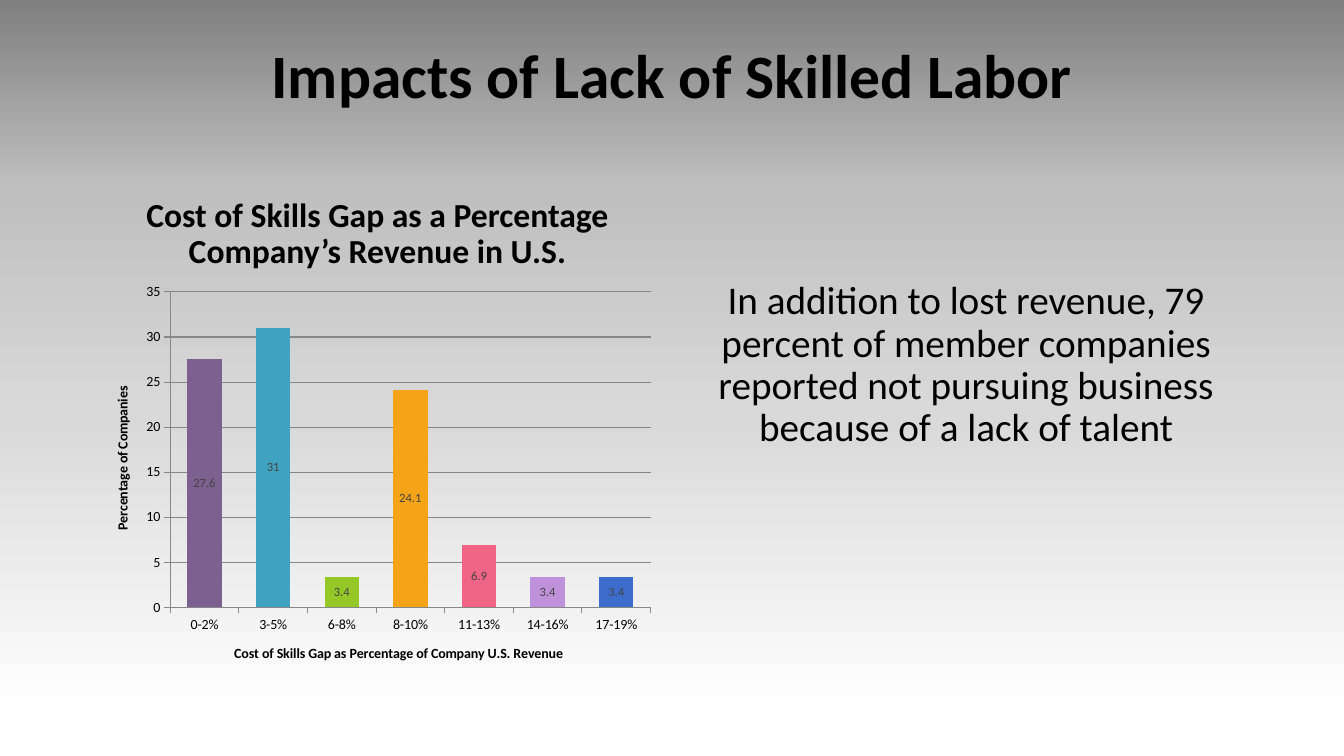
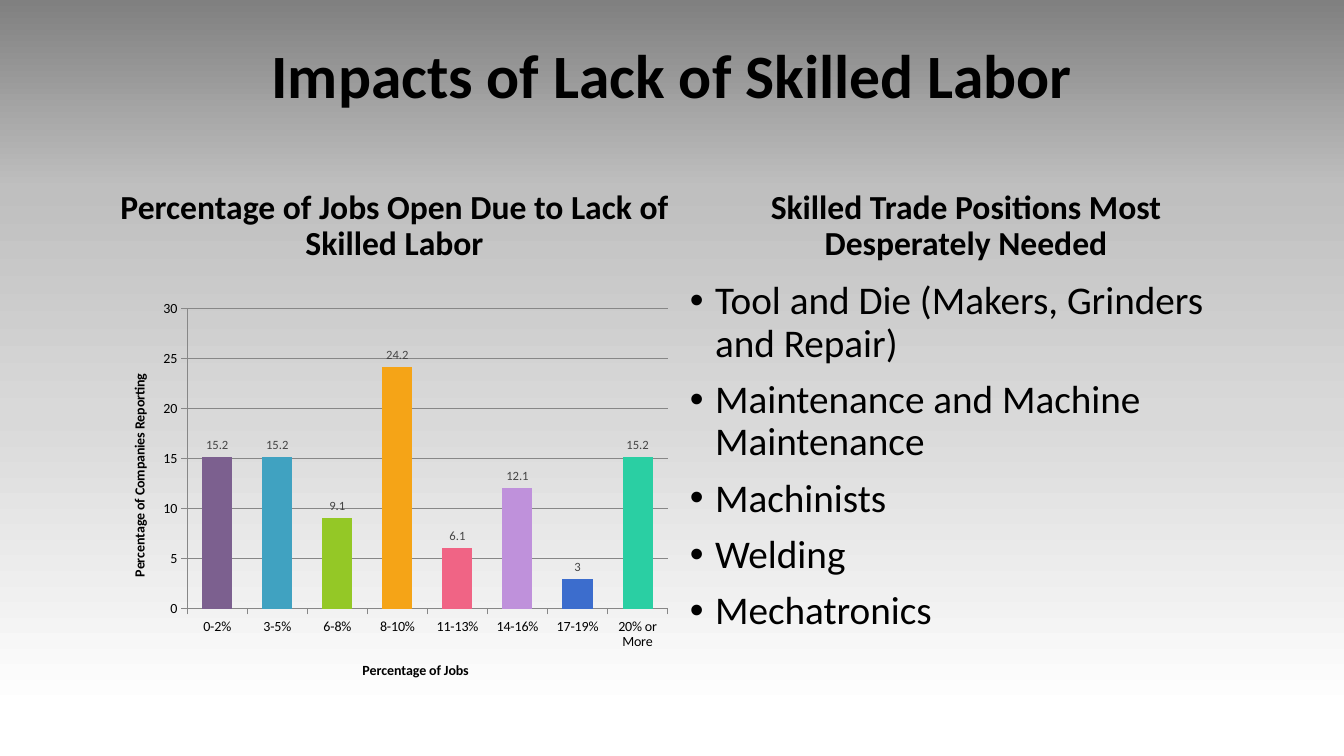
"""Build two slides on the impacts of a lack of skilled labor."""
from lxml import etree
from pptx import Presentation
from pptx import util as u
from pptx.chart import data as cd
from pptx.dml.color import RGBColor
from pptx.enum import chart as ch, text as t
from pptx.oxml import ns

FONT, BLACK, LABEL, GRID = "Calibri", "000000", "444444", "878787"
BACKGROUND = [(6, "FFFFFF"), (45, "D9D9D9"), (75, "BFBFBF"), (100, "808080")]
BAR_COLORS = ["7C608F", "40A2C1", "94C826", "F5A417", "F06485", "BF91DB", "3C6DCD", "2ACFA3"]
RANGES = ["0-2%", "3-5%", "6-8%", "8-10%", "11-13%", "14-16%", "17-19%", "20% or More"]
TITLE = "Impacts of Lack of Skilled Labor"
TITLE_BOX = (93, 40, 1159, 146)
RIGHT_HEADING = (680, 185, 572, 91)
RIGHT_BODY = (680, 276, 572, 406)
TOP, BOTTOM = t.MSO_ANCHOR.TOP, t.MSO_ANCHOR.BOTTOM

SLIDES = [
    {
        "headings": [((93, 185, 569, 91), BOTTOM,
                      "Cost of Skills Gap as a Percentage Company’s Revenue in U.S.")],
        "body": ["In addition to lost revenue, 79 percent of member companies "
                 "reported not pursuing business because of a lack of talent"],
        "bullets": False,
        "chart": {
            "box": (93, 276, 569, 406),
            "values": [27.6, 31, 3.4, 24.1, 6.9, 3.4, 3.4],
            "x": "Cost of Skills Gap as Percentage of Company U.S. Revenue",
            "y": "Percentage of Companies",
            "top": 35,
            "labels": ch.XL_LABEL_POSITION.CENTER,
        },
    },
    {
        "headings": [((110, 185, 569, 91), TOP,
                      "Percentage of Jobs Open Due to Lack of Skilled Labor"),
                     (RIGHT_HEADING, TOP,
                      "Skilled Trade Positions Most Desperately Needed")],
        "body": ["Tool and Die (Makers, Grinders and Repair)",
                 "Maintenance and Machine Maintenance",
                 "Machinists", "Welding", "Mechatronics"],
        "bullets": True,
        "chart": {
            "box": (110, 293, 569, 406),
            "values": [15.2, 15.2, 9.1, 24.2, 6.1, 12.1, 3, 15.2],
            "x": "Percentage of Jobs",
            "y": "Percentage of Companies Reporting",
            "top": 30,
            "labels": ch.XL_LABEL_POSITION.OUTSIDE_END,
        },
    },
]


def px(n):
    return u.Emu(round(n * 914400 / 100.8))


def rgb(color):
    return RGBColor.from_string(color)


def style(font, size, bold=False, color=BLACK):
    font.name, font.size, font.bold = FONT, u.Pt(size), bold
    font.color.rgb = rgb(color)


def set_background(master):
    fill = master.background.fill
    fill.gradient()
    fill.gradient_angle = 90
    stops = master.element.find(".//" + ns.qn("p:bgPr")).find(".//" + ns.qn("a:gsLst"))
    for old in list(stops):
        stops.remove(old)
    for pos, color in BACKGROUND:
        stop = etree.SubElement(stops, ns.qn("a:gs"), pos=str(pos * 1000))
        etree.SubElement(stop, ns.qn("a:srgbClr"), val=color)


def add_bullet(p):
    pPr = p._p.get_or_add_pPr()
    pPr.set("marL", str(u.Inches(0.25)))
    pPr.set("indent", str(-u.Inches(0.25)))
    etree.SubElement(pPr, ns.qn("a:buFont"), typeface="Arial")
    etree.SubElement(pPr, ns.qn("a:buChar"), char="•")


def write(sp, lines, size, bold=False, anchor=TOP, bullets=False):
    tf = sp.text_frame
    tf.word_wrap, tf.auto_size, tf.vertical_anchor = True, t.MSO_AUTO_SIZE.NONE, anchor
    for i, line in enumerate(lines):
        p = tf.add_paragraph() if i else tf.paragraphs[0]
        p.text = line
        if bullets:
            add_bullet(p)
        p.alignment = t.PP_ALIGN.LEFT if bullets else t.PP_ALIGN.CENTER
        p.line_spacing = 0.9
        p.space_before = u.Pt(10 if i else 0)
        style(p.runs[0].font, size, bold)


def add_title(s):
    sp = s.shapes.title
    sp.left, sp.top, sp.width, sp.height = map(px, TITLE_BOX)
    write(sp, [TITLE], 44, True)


def add_text(s, box, lines, size, **options):
    write(s.shapes.add_textbox(*map(px, box)), lines, size, **options)


def format_axis(axis, title):
    tf = axis.axis_title.text_frame
    tf.text = title
    style(tf.paragraphs[0].runs[0].font, 10, True)
    style(axis.tick_labels.font, 10)
    axis.major_tick_mark = ch.XL_TICK_MARK.OUTSIDE
    axis.format.line.color.rgb = rgb(GRID)
    axis.format.line.width = u.Pt(0.75)


def add_bars(s, box, values, x, y, top, labels):
    data = cd.CategoryChartData()
    data.categories = RANGES[:len(values)]
    data.add_series(y, values)
    chart = s.shapes.add_chart(ch.XL_CHART_TYPE.COLUMN_CLUSTERED, *map(px, box), data).chart
    chart.has_title = chart.has_legend = False
    style(chart.font, 10)
    format_axis(chart.category_axis, x)
    axis = chart.value_axis
    format_axis(axis, y)
    axis.minimum_scale, axis.maximum_scale, axis.major_unit = 0, top, 5
    axis.has_major_gridlines = True
    axis.major_gridlines.format.line.color.rgb = rgb(GRID)
    axis.major_gridlines.format.line.width = u.Pt(0.75)
    plot = chart.plots[0]
    plot.gap_width, plot.vary_by_categories, plot.has_data_labels = 100, False, True
    plot.data_labels.show_value = True
    plot.data_labels.position = labels
    style(plot.data_labels.font, 9, color=LABEL)
    for i, color in enumerate(BAR_COLORS[:len(values)]):
        fill = plot.series[0].points[i].format.fill
        fill.solid()
        fill.fore_color.rgb = rgb(color)


def main():
    prs = Presentation()
    prs.slide_width, prs.slide_height = px(1344), px(756)
    set_background(prs.slide_master)
    for content in SLIDES:
        s = prs.slides.add_slide(prs.slide_layouts.get_by_name("Title Only"))
        add_title(s)
        for box, anchor, heading in content["headings"]:
            add_text(s, box, [heading], 24, bold=True, anchor=anchor)
        add_bars(s, **content["chart"])
        add_text(s, RIGHT_BODY, content["body"], 28, bullets=content["bullets"])
    prs.save("out.pptx")


if __name__ == "__main__":
    main()
